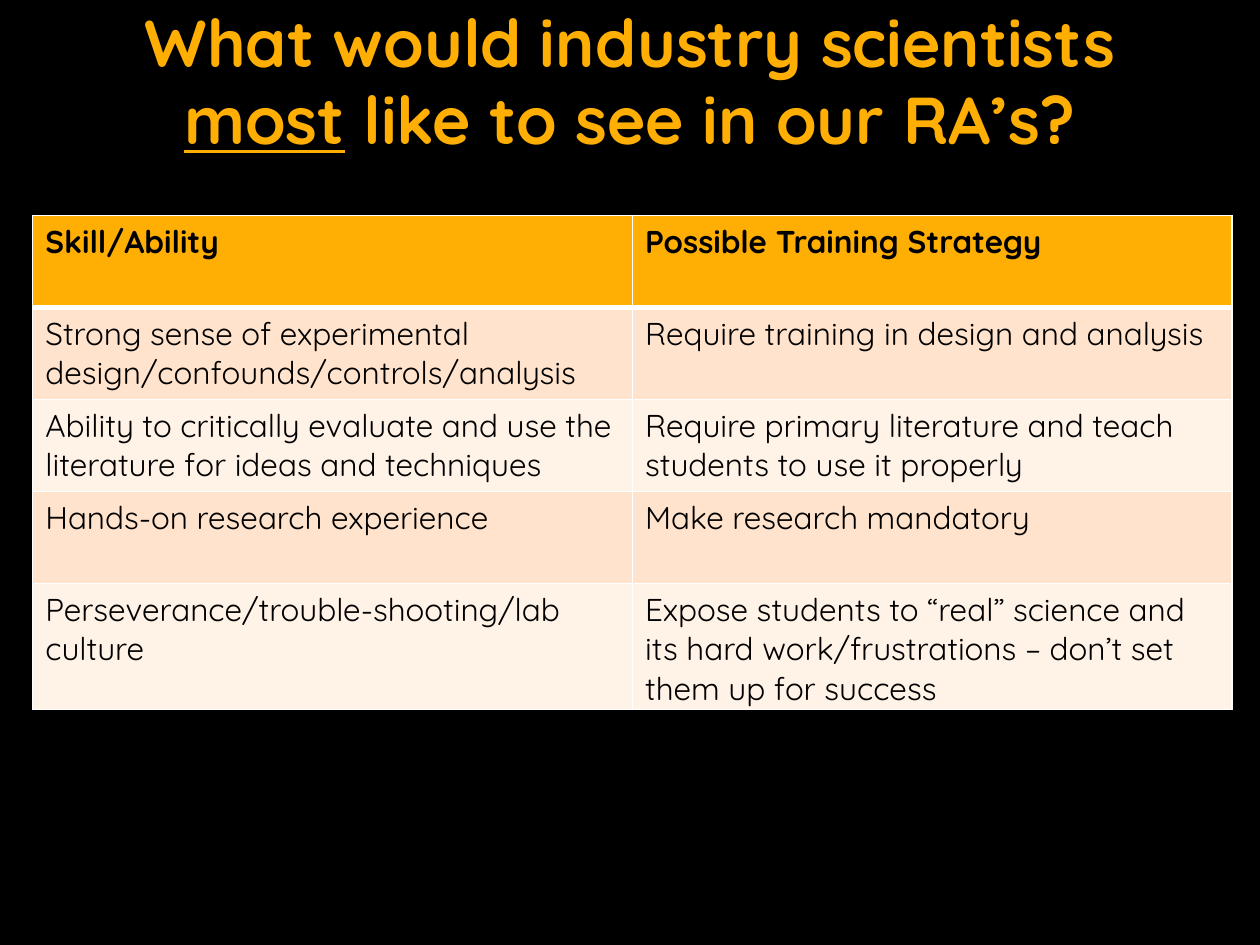
from lxml import etree
from pptx import Presentation
from pptx import util as u
from pptx.dml.color import RGBColor
from pptx.enum import text
from pptx.oxml import ns

FONT = "Quicksand"
AMBER, BLACK, WHITE = "FFAF03", "000000", "FFFFFF"
BANDS = ["FFE3CC", "FFF2E7"]
TITLE = [("What would industry scientists ", False), ("most", True),
         (" like to see in our RA’s?", False)]
ROWS = [
    ("Skill/Ability", "Possible Training Strategy"),
    ("Strong sense of experimental design/confounds/controls/analysis",
     "Require training in design and analysis"),
    ("Ability to critically evaluate and use the literature for ideas and techniques",
     "Require primary literature and teach students to use it properly"),
    ("Hands-on research experience", "Make research mandatory"),
    ("Perseverance/trouble-shooting/lab culture",
     "Expose students to “real” science and its hard work/frustrations"
     " – don’t set them up for success"),
]
COLUMN_WIDTH, ROW_HEIGHT = 4.76, 0.73


def color(value):
    return RGBColor.from_string(value)


def style(span, size, value, bold):
    span.font.name = FONT
    span.font.size = u.Pt(size)
    span.font.bold = bold
    span.font.color.rgb = color(value)


def set_borders(cell, widths):
    """Draw white cell edges; widths maps an edge tag to points."""
    properties = cell._tc.get_or_add_tcPr()
    for position, (edge, width) in enumerate(widths.items()):
        line = etree.Element(ns.qn(f"a:{edge}"), w=str(u.Pt(width)))
        fill = etree.SubElement(line, ns.qn("a:solidFill"))
        etree.SubElement(fill, ns.qn("a:srgbClr"), val=WHITE)
        properties.insert(position, line)


def add_title(slide):
    box = slide.shapes.add_textbox(u.Inches(0.67), 0, u.Inches(8.66), u.Inches(1.36))
    frame = box.text_frame
    frame.word_wrap = True
    frame.vertical_anchor = text.MSO_ANCHOR.TOP
    para = frame.paragraphs[0]
    para.alignment = text.PP_ALIGN.CENTER
    para.line_spacing = 0.97
    for words, underlined in TITLE:
        span = para.add_run()
        span.text = words
        style(span, 37.8, AMBER, True)
        span.font.underline = underlined


def add_skills_table(slide):
    columns = len(ROWS[0])
    table = slide.shapes.add_table(
        len(ROWS), columns, u.Inches(0.26), u.Inches(1.71),
        u.Inches(COLUMN_WIDTH * columns), u.Inches(ROW_HEIGHT * len(ROWS))).table
    for column in table.columns:
        column.width = u.Inches(COLUMN_WIDTH)
    for index, row in enumerate(ROWS):
        table.rows[index].height = u.Inches(ROW_HEIGHT)
        header = index == 0
        edges = {"lnL": 1, "lnR": 1, "lnT": 3 if index == 1 else 1,
                 "lnB": 3 if header else 1}
        for number, words in enumerate(row):
            cell = table.cell(index, number)
            cell.text_frame.text = words
            style(cell.text_frame.paragraphs[0].runs[0], 18, BLACK, header)
            cell.fill.solid()
            cell.fill.fore_color.rgb = color(AMBER if header else BANDS[(index - 1) % 2])
            set_borders(cell, edges)


def main():
    deck = Presentation()
    deck.slide_width, deck.slide_height = u.Inches(10), u.Inches(7.5)
    slide = deck.slides.add_slide(deck.slide_layouts[6])
    slide.background.fill.solid()
    slide.background.fill.fore_color.rgb = color(BLACK)
    add_title(slide)
    add_skills_table(slide)
    deck.save("out.pptx")


if __name__ == "__main__":
    main()
